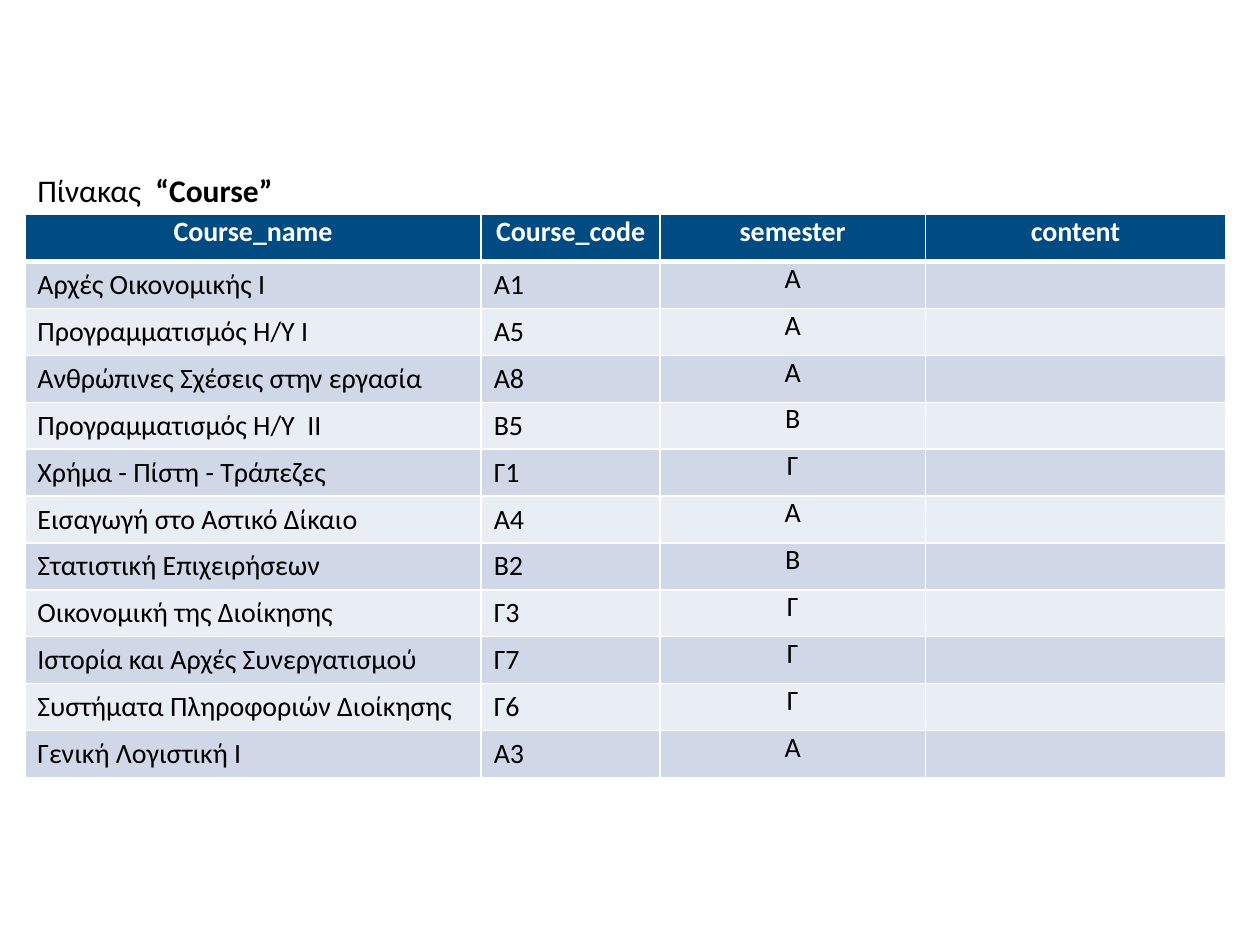
from lxml import etree
from pptx import Presentation
from pptx.dml.color import RGBColor
from pptx.enum.text import MSO_ANCHOR, PP_ALIGN
from pptx.oxml.ns import qn
from pptx.util import Pt

CENTER, LEFT = PP_ALIGN.CENTER, PP_ALIGN.LEFT
TOP = MSO_ANCHOR.TOP
WHITE = RGBColor(0xFF, 0xFF, 0xFF)
BLACK = RGBColor(0, 0, 0)
NAVY = RGBColor(0x00, 0x4B, 0x82)
BANDS = (RGBColor(0xE9, 0xED, 0xF4), RGBColor(0xD0, 0xD8, 0xE8))
FONT = "Calibri"

WIDTHS = (260.8, 102.2, 151.6, 171.6)
ROW = 26.8
HEADS = ("Course_name", "Course_code", "semester", "content")
COURSES = (
    ("Αρχές Οικονομικής Ι", "Α1", "Α", ""),
    ("Προγραμματισμός Η/Υ Ι", "Α5", "Α", ""),
    ("Ανθρώπινες Σχέσεις στην εργασία", "Α8", "Α", ""),
    ("Προγραμματισμός Η/Υ  ΙΙ", "Β5", "Β", ""),
    ("Χρήμα - Πίστη - Τράπεζες", "Γ1", "Γ", ""),
    ("Εισαγωγή στο Αστικό Δίκαιο", "Α4", "Α", ""),
    ("Στατιστική Επιχειρήσεων", "Β2", "Β", ""),
    ("Οικονομική της Διοίκησης", "Γ3", "Γ", ""),
    ("Ιστορία και Αρχές Συνεργατισμού", "Γ7", "Γ", ""),
    ("Συστήματα Πληροφοριών Διοίκησης", "Γ6", "Γ", ""),
    ("Γενική Λογιστική Ι", "Α3", "Α", ""),
)


def style(font, size, color, bold=None):
    font.name, font.size, font.bold = FONT, Pt(size), bold
    font.color.rgb = color


def border(cell, widths):
    """White cell edges; widths maps each side to its points."""
    props = cell._tc.get_or_add_tcPr()
    for side, width in widths.items():
        line = etree.SubElement(props, qn(f"a:ln{side}"), w=str(Pt(width)))
        fill = etree.SubElement(line, qn("a:solidFill"))
        etree.SubElement(fill, qn("a:srgbClr"), val=str(WHITE))


def add_title(slide, left, top, width, height):
    box = slide.shapes.add_textbox(Pt(left), Pt(top), Pt(width), Pt(height))
    box.text_frame.word_wrap = False
    para = box.text_frame.paragraphs[0]
    style(para.font, 18, BLACK)
    para.add_run().text = "Πίνακας  "
    name = para.add_run()
    name.text = "“Course”"
    name.font.bold = True


def fill_cell(cell, text, row, col):
    head = row == 0
    tight = head or col >= 2
    cell.text = text
    cell.vertical_anchor = TOP
    if tight:
        cell.margin_left = cell.margin_right = Pt(5)
        cell.margin_top = cell.margin_bottom = Pt(0)
    para = cell.text_frame.paragraphs[0]
    para.alignment = CENTER if tight else LEFT
    style(para.font, 16, WHITE if head else BLACK, head)
    # The rule below the heads is thicker
    border(cell, {"L": 1, "R": 1, "T": 3 if row == 1 else 1, "B": 3 if head else 1})
    cell.fill.solid()
    cell.fill.fore_color.rgb = NAVY if head else BANDS[row % 2]


def add_courses(slide, left, top):
    rows = (HEADS,) + COURSES
    table = slide.shapes.add_table(
        len(rows), len(HEADS), Pt(left), Pt(top),
        Pt(sum(WIDTHS)), Pt(ROW * len(rows))).table
    for column, width in zip(table.columns, WIDTHS):
        column.width = Pt(width)
    for r, row in enumerate(rows):
        table.rows[r].height = Pt(ROW)
        for c, text in enumerate(row):
            fill_cell(table.cell(r, c), text, r, c)


def main():
    deck = Presentation()
    deck.slide_width, deck.slide_height = Pt(720), Pt(540)
    slide = deck.slides.add_slide(deck.slide_layouts[6])
    add_courses(slide, 14.2, 122.7)
    add_title(slide, 14.2, 94.3, 150.5, 29)
    deck.save("out.pptx")


if __name__ == "__main__":
    main()
